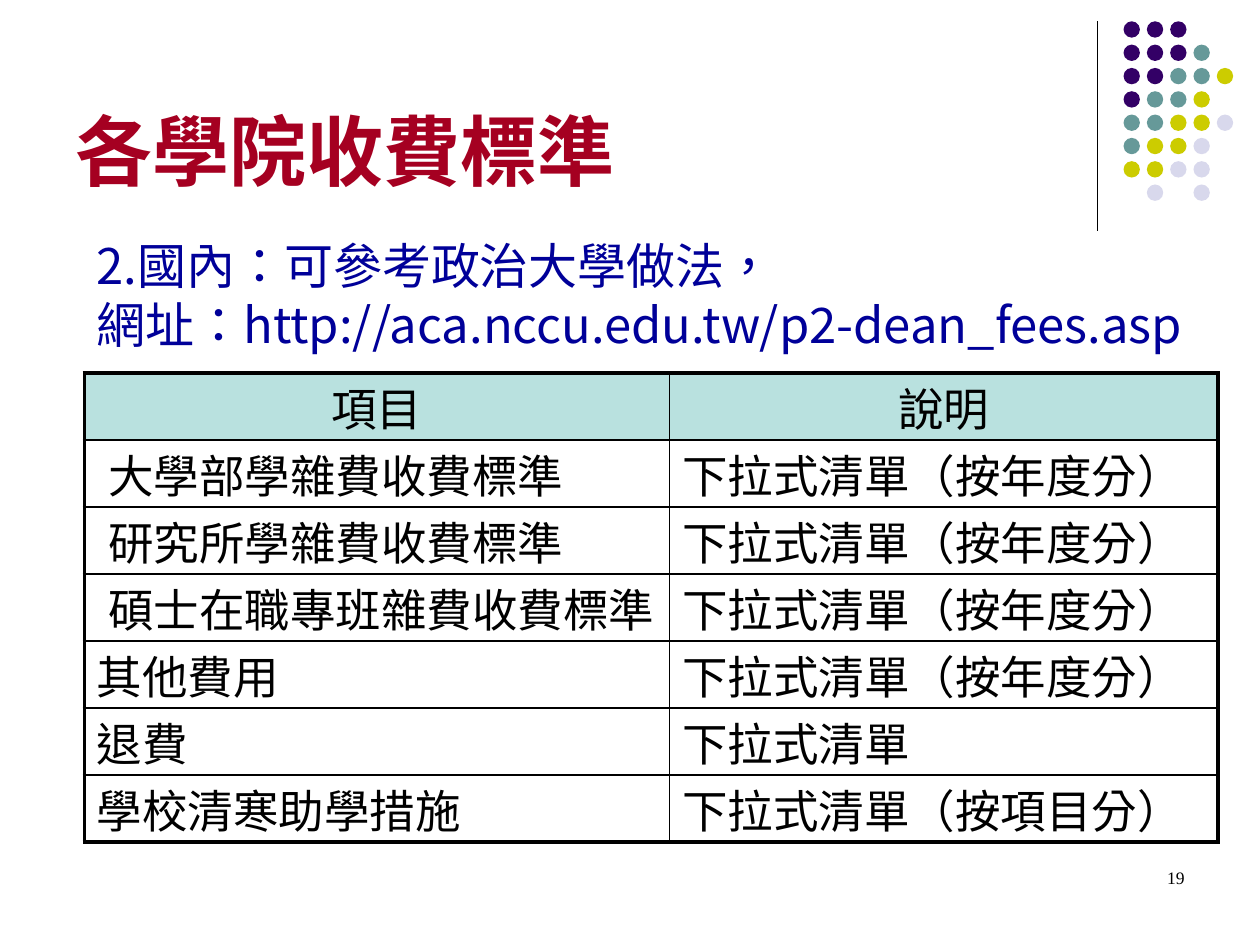
from dataclasses import dataclass

from lxml.etree import SubElement
from pptx import Presentation
from pptx.dml.color import RGBColor
from pptx.enum.shapes import MSO_CONNECTOR, MSO_SHAPE
from pptx.enum.text import MSO_ANCHOR, PP_ALIGN
from pptx.oxml import parse_xml
from pptx.oxml.ns import nsdecls, qn
from pptx.util import Cm, Pt


@dataclass(frozen=True)
class Theme:
    title: str = "A50021"
    body: str = "000099"
    ink: str = "000000"
    header: str = "B9E1DF"
    purple: str = "330066"
    teal: str = "669999"
    lime: str = "CCCC00"
    lavender: str = "D8D8EC"
    serif: str = "Times New Roman"
    sans: str = "Noto Sans CJK SC"
    title_size: int = 44
    body_size: int = 28
    table_size: int = 26
    number_size: int = 10


theme = Theme()


def add_run(paragraph, text, font_name, size, color, bold=False):
    run = paragraph.add_run()
    run.text = text
    run.font.name = font_name
    run.font.size = Pt(size)
    run.font.bold = bold
    run.font.color.rgb = RGBColor.from_string(color)
    properties = run.font._element
    properties.set("lang", "zh-TW")
    SubElement(properties, qn("a:ea")).set("typeface", theme.sans)


def add_text_frame(left, top, width, height):
    """Add a wrapping text box and return its text frame."""
    box = slide.shapes.add_textbox(Cm(left), Cm(top), Cm(width), Cm(height))
    box.text_frame.word_wrap = True
    return box.text_frame


presentation = Presentation()
presentation.slide_width = Cm(25.4)
presentation.slide_height = Cm(19.05)
slide = presentation.slides.add_slide(presentation.slide_layouts[6])

# Corner decoration: a rule and a grid of dots
rule = slide.shapes.add_connector(
    MSO_CONNECTOR.STRAIGHT, Cm(22.12), Cm(0.43), Cm(22.12), Cm(4.65))
rule.line.color.rgb = RGBColor.from_string(theme.ink)
rule.line.width = Pt(0.75)
SubElement(rule._element.spPr, qn("a:effectLst"))

dot_colors = {"P": theme.purple, "T": theme.teal,
              "Y": theme.lime, "L": theme.lavender}
dot_rows = ["PPP", "PPPT", "PPTTY", "PTTY", "TTYYL", "TYYL", "YYLL", ".L.L"]
dot_pitch = 0.47
for row, pattern in enumerate(dot_rows):
    for column, key in enumerate(pattern):
        if key == ".":
            continue
        dot = slide.shapes.add_shape(
            MSO_SHAPE.OVAL, Cm(22.65 + column * dot_pitch),
            Cm(0.43 + row * dot_pitch), Cm(0.33), Cm(0.33))
        dot.shadow.inherit = False
        dot.fill.solid()
        dot.fill.fore_color.rgb = RGBColor.from_string(dot_colors[key])
        dot.line.fill.background()

# Slide number
number = add_text_frame(18.21, 17.35, 5.92, 1.27).paragraphs[0]
number.alignment = PP_ALIGN.RIGHT
add_run(number, "19", theme.serif, theme.number_size, theme.ink)

# Title
title = add_text_frame(1.27, 0.33, 20.96, 3.61)
title.vertical_anchor = MSO_ANCHOR.BOTTOM
title.margin_bottom = 0
add_run(title.paragraphs[0], "各學院收費標準", theme.serif,
        theme.title_size, theme.title, bold=True)

# Reference with its address
body = add_text_frame(1.7, 4.52, 23.22, 2.62)
body.margin_top = Cm(0.23)
body_lines = [
    [("2.國內：可參考政治大學做法", theme.sans), ("，", "Arial")],
    [("網址：http://aca.nccu.edu.tw/p2-dean_fees.asp", theme.sans)],
]
for index, runs in enumerate(body_lines):
    paragraph = body.paragraphs[0] if index == 0 else body.add_paragraph()
    paragraph.line_spacing = Pt(33.6)
    for text, font_name in runs:
        add_run(paragraph, text, font_name, theme.body_size, theme.body)

# Fee table
by_year = "下拉式清單（按年度分）"
fee_rows = [
    ("項目", "說明"),
    ("大學部學雜費收費標準", by_year),
    ("研究所學雜費收費標準", by_year),
    ("碩士在職專班雜費收費標準", by_year),
    ("其他費用", by_year),
    ("退費", "下拉式清單"),
    ("學校清寒助學措施", "下拉式清單（按項目分）"),
]
indented_rows = (1, 2, 3)
column_widths = (11.8, 11.05)
row_height = 1.35
last_row, last_column = len(fee_rows) - 1, len(column_widths) - 1
table = slide.shapes.add_table(
    len(fee_rows), len(column_widths), Cm(1.7), Cm(7.52),
    Cm(sum(column_widths)), Cm(row_height * len(fee_rows))).table
table.first_row = False
table.horz_banding = False
for column, width in enumerate(column_widths):
    table.columns[column].width = Cm(width)

for row, texts in enumerate(fee_rows):
    table.rows[row].height = Cm(row_height)
    for column, text in enumerate(texts):
        cell = table.cell(row, column)
        indented = column == 0 and row in indented_rows
        cell.margin_left = Cm(0.48 if indented else 0.25)
        cell.margin_right = Cm(0.25)
        cell.margin_top = Cm(0.28)
        cell.margin_bottom = 0
        if row == 0:
            cell.fill.solid()
            cell.fill.fore_color.rgb = RGBColor.from_string(theme.header)
        else:
            cell.fill.background()

        paragraph = cell.text_frame.paragraphs[0]
        paragraph.alignment = PP_ALIGN.CENTER if row == 0 else PP_ALIGN.LEFT
        paragraph.line_spacing = Pt(30)
        add_run(paragraph, text, theme.serif, theme.table_size, theme.ink)

        outer_edges = {"lnL": column == 0, "lnR": column == last_column,
                       "lnT": row == 0, "lnB": row == last_row}
        for position, (edge, is_outer) in enumerate(outer_edges.items()):
            border = parse_xml(
                f'<a:{edge} {nsdecls("a")} w="{Pt(2.25 if is_outer else 1)}">'
                f'<a:solidFill><a:srgbClr val="{theme.ink}"/></a:solidFill>'
                f'</a:{edge}>')
            cell._tc.get_or_add_tcPr().insert(position, border)

presentation.save("out.pptx")
